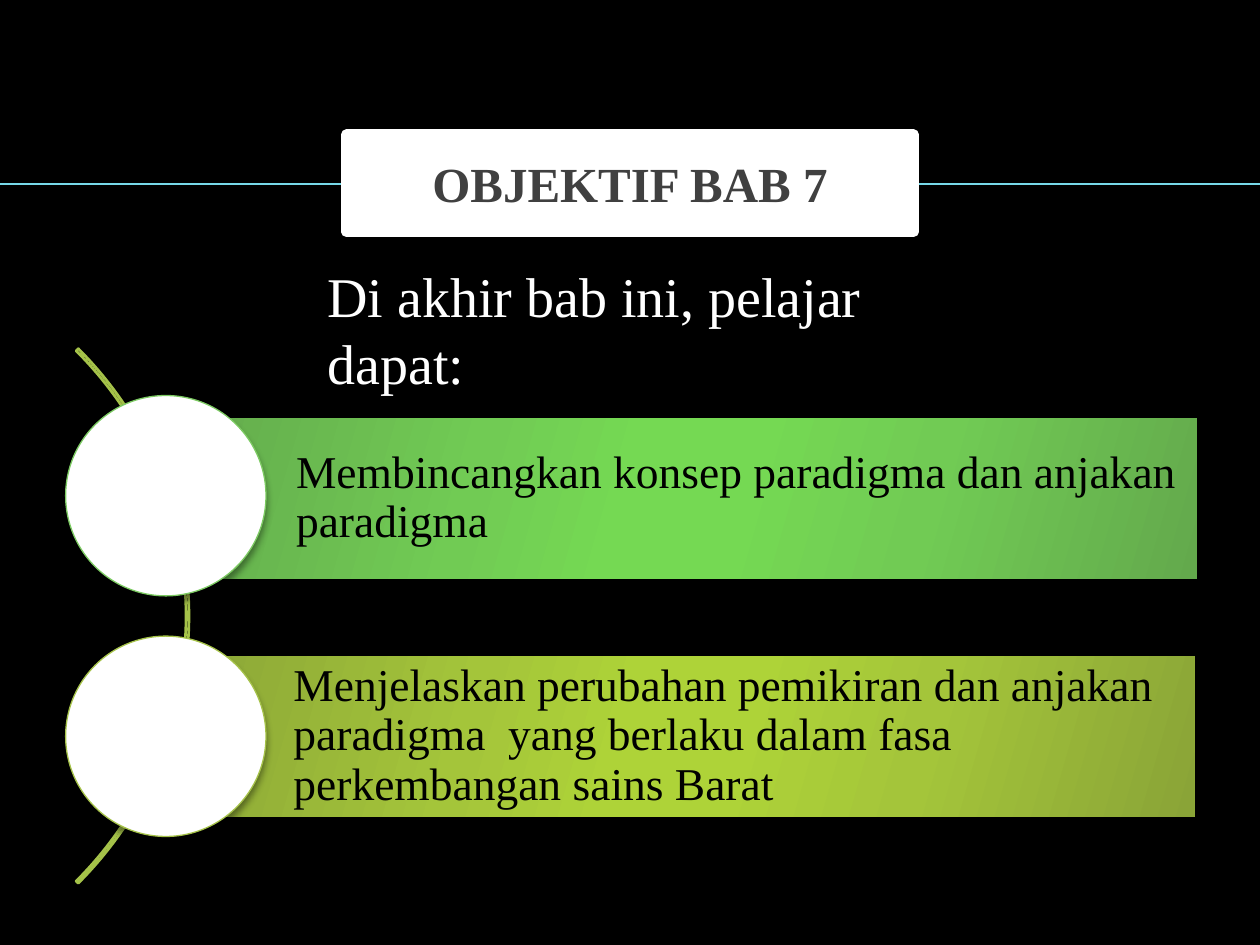
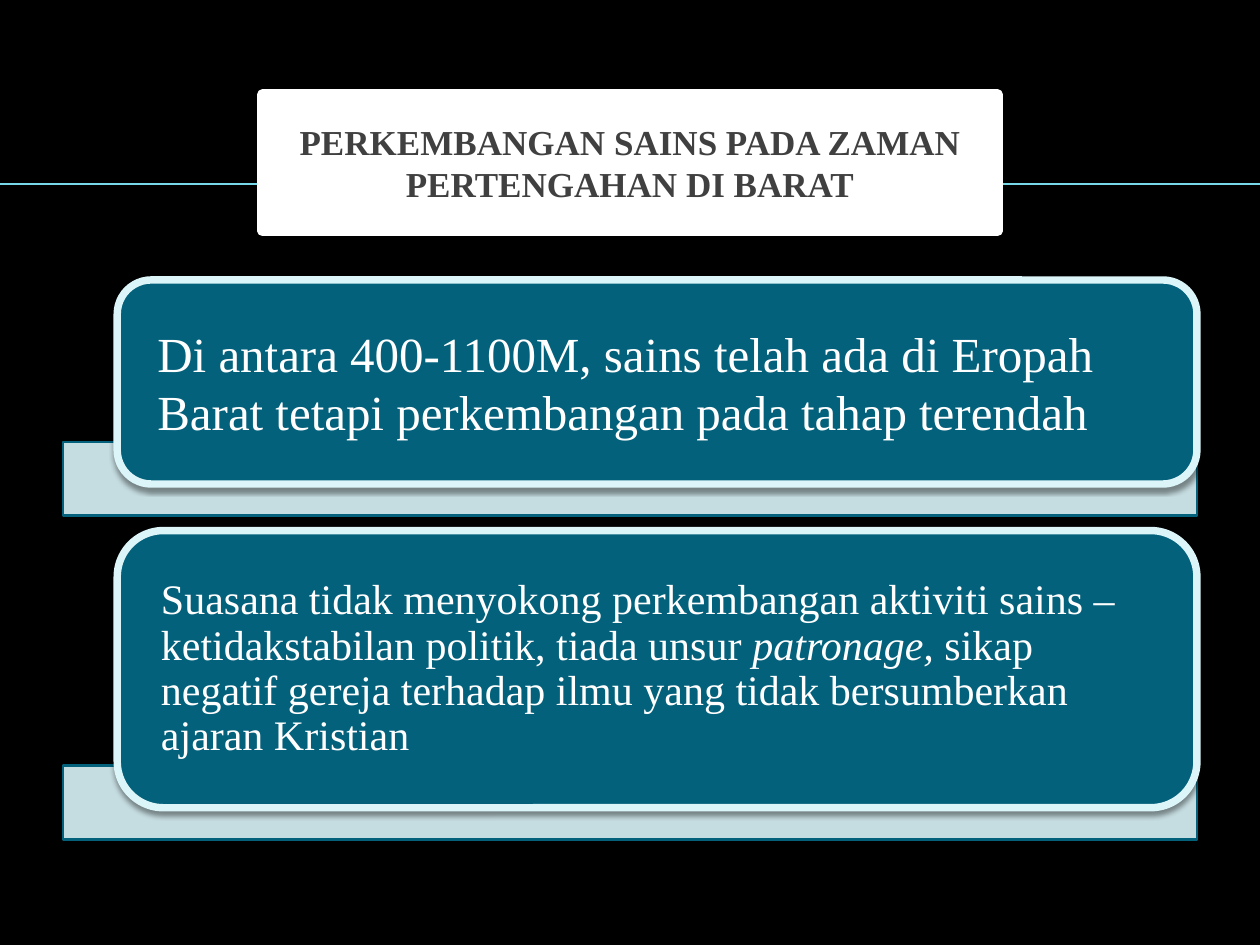
"""Build two chapter slides: the objectives, and science in the medieval West."""
import pptx
import pptx.dml.color
import pptx.enum.shapes
import pptx.enum.text
import pptx.oxml
import pptx.oxml.ns
import pptx.util
from lxml import etree

Pt = pptx.util.Pt
RGBColor = pptx.dml.color.RGBColor
SHAPE = pptx.enum.shapes.MSO_SHAPE
ALIGN = pptx.enum.text.PP_ALIGN
MIDDLE = pptx.enum.text.MSO_ANCHOR.MIDDLE
qn = pptx.oxml.ns.qn

BLACK = RGBColor(0x00, 0x00, 0x00)
WHITE = RGBColor(0xFF, 0xFF, 0xFF)
GREY = RGBColor(0x40, 0x40, 0x40)
AQUA = RGBColor(0x77, 0xD9, 0xE8)
GREEN = RGBColor(0x7C, 0xCA, 0x62)
LIME = RGBColor(0xA5, 0xC2, 0x49)
TEAL = RGBColor(0x04, 0x61, 0x7B)
PALE = RGBColor(0xDB, 0xF5, 0xF9)
GREEN_SHADES = [RGBColor(0x63, 0xA9, 0x4C), RGBColor(0x71, 0xCB, 0x54), RGBColor(0x75, 0xD9, 0x53)]
LIME_SHADES = [RGBColor(0x8A, 0xA4, 0x37), RGBColor(0xA4, 0xC5, 0x3A), RGBColor(0xAE, 0xD3, 0x38)]
FONT = "Times New Roman"

OBJECTIVES = {
    "title": "OBJEKTIF BAB 7",
    "title_box": (198, 77, 324, 55.5),
    "title_size": 28,
    "intro": "Di akhir bab ini, pelajar dapat:",
    "items": [
        ("Membincangkan konsep paradigma dan anjakan paradigma",
         (96.5, 239), GREEN_SHADES, GREEN),
        ("Menjelaskan perubahan pemikiran dan anjakan paradigma  yang berlaku "
         "dalam fasa perkembangan sains Barat",
         (95, 375), LIME_SHADES, LIME),
    ],
}
MEDIEVAL = {
    "title": "PERKEMBANGAN SAINS PADA ZAMAN PERTENGAHAN DI BARAT",
    "title_box": (150, 54, 420, 78),
    "title_size": 20,
    "cards": [
        ([("Di antara 400-1100M, sains telah ada di Eropah Barat tetapi "
           "perkembangan pada tahap terendah", False)], 28, 1.0, 116.6),
        ([("Suasana tidak menyokong perkembangan aktiviti sains – ketidakstabilan "
           "politik, tiada unsur ", False),
          ("patronage, ", True),
          ("sikap negatif gereja terhadap ilmu yang tidak bersumberkan ajaran "
           "Kristian", False)], 24, 0.9, 158.4),
    ],
}


def assign(target, values):
    for name, value in values.items():
        setattr(target, name, value)


def write(holder, runs, size, color, margins, paragraph_format=None, bold=False):
    """Fill a shape's text with (words, italic) runs in one paragraph."""
    frame = holder.text_frame
    left, top, right, bottom = map(Pt, margins)
    assign(frame, {"word_wrap": True, "margin_left": left, "margin_top": top,
                   "margin_right": right, "margin_bottom": bottom})
    paragraph = frame.paragraphs[0]
    assign(paragraph, {"alignment": ALIGN.LEFT, **(paragraph_format or {})})
    for words, italic in runs:
        run = paragraph.add_run()
        run.text = words
        assign(run.font, {"name": FONT, "size": Pt(size), "bold": bold, "italic": italic})
        run.font.color.rgb = color


def paint(shape, fill=None, line=None, width=0):
    if fill is None:
        shape.fill.background()
    else:
        shape.fill.solid()
        shape.fill.fore_color.rgb = fill
    if line is None:
        shape.line.fill.background()
    else:
        shape.line.color.rgb = line
        shape.line.width = Pt(width)


def add_part(slide, kind, box, **look):
    part = slide.shapes.add_shape(kind, *map(Pt, box))
    part.shadow.inherit = False
    part.text_frame.vertical_anchor = MIDDLE
    paint(part, **look)
    return part


def cast_shadow(shape, opacity, blur, distance):
    effects = shape._element.spPr.find(qn("a:effectLst"))
    shadow = etree.SubElement(effects, qn("a:outerShdw"), blurRad=str(Pt(blur)),
                              dist=str(Pt(distance)), dir="5400000", rotWithShape="0")
    black = etree.SubElement(shadow, qn("a:srgbClr"), val=str(BLACK))
    etree.SubElement(black, qn("a:alpha"), val=str(opacity * 1000))


def shade(shape, shades):
    """Give a shape a mirrored six-stop gradient."""
    shape.fill.gradient()
    gradient = shape._element.spPr.find(qn("a:gradFill"))
    stops = gradient.find(qn("a:gsLst"))
    for stop in list(stops):
        stops.remove(stop)
    for percent, color in zip((0, 30, 45, 55, 73, 100), shades + shades[::-1]):
        stop = etree.SubElement(stops, qn("a:gs"), pos=str(percent * 1000))
        etree.SubElement(stop, qn("a:srgbClr"), val=str(color))
    gradient.find(qn("a:lin")).set("ang", str(16 * 60000))


def start_slide(deck, content):
    """Add a slide with the rule across it."""
    slide = deck.slides.add_slide(deck.slide_layouts[5])
    rule = slide.shapes.add_connector(
        pptx.enum.shapes.MSO_CONNECTOR.STRAIGHT, 0, Pt(105), deck.slide_width, Pt(105))
    rule.line.color.rgb = AQUA
    rule.line.width = Pt(1)
    etree.SubElement(rule._element.spPr, qn("a:effectLst"))
    return slide


def place_title(slide, content):
    """Format the title plate and bring it in front of the rule."""
    title = slide.shapes.title
    assign(title, dict(zip(("left", "top", "width", "height"), map(Pt, content["title_box"]))))
    paint(title, WHITE, WHITE, 6)
    title.text_frame.vertical_anchor = MIDDLE
    write(title, [(content["title"], False)], content["title_size"], GREY,
          (7.2, 3.6, 7.2, 3.6), {"alignment": ALIGN.CENTER, "space_before": Pt(4)}, bold=True)
    slide.shapes._spTree.append(title._element)


def build_objectives(deck):
    slide = start_slide(deck, OBJECTIVES)
    arc = add_part(slide, SHAPE.BLOCK_ARC, (-324, 136, 432, 432), line=LIME, width=1.5)
    for index, amount in enumerate((189, 27, 0.004)):
        arc.adjustments[index] = amount
    disc, first_disc_top, pitch = 114.5, 226, 137.5
    for index, (words, corner, shades, outline) in enumerate(OBJECTIVES["items"]):
        bar = add_part(slide, SHAPE.RECTANGLE, (*corner, 587.5, 91.5))
        shade(bar, shades)
        cast_shadow(bar, 57, 4.5, 3)
        write(bar, [(words, False)], 26, BLACK, (72.7, 5, 5, 5), {"line_spacing": 0.9})
        marker = add_part(slide, SHAPE.OVAL,
                          (37.5, first_disc_top + index * pitch, disc, disc),
                          fill=WHITE, line=outline, width=0.75)
        cast_shadow(marker, 40, 4, 3.3)
    place_title(slide, OBJECTIVES)
    intro = slide.shapes.add_textbox(*map(Pt, (180, 146, 392.4, 46)))
    write(intro, [(OBJECTIVES["intro"], False)], 32, WHITE, (7.2, 3.6, 7.2, 3.6))


def build_medieval(deck):
    slide = start_slide(deck, MEDIEVAL)
    top, overlap, strip_height, gap = 160, 24, 42, 8.6
    for runs, size, spacing, height in MEDIEVAL["cards"]:
        strip_top = top + height - overlap
        strip = add_part(slide, SHAPE.RECTANGLE, (36, strip_top, 648, strip_height),
                         fill=PALE, line=TEAL, width=1.5)
        tint = strip._element.spPr.find(qn("a:solidFill")).find(qn("a:srgbClr"))
        etree.SubElement(tint, qn("a:alpha"), val="90000")
        card = add_part(slide, SHAPE.ROUNDED_RECTANGLE, (67, top, 617, height),
                        fill=TEAL, line=PALE, width=4.25)
        cast_shadow(card, 40, 3, 2)
        write(card, runs, size, WHITE, (17.3, 0, 17.3, 0), {"line_spacing": spacing})
        top = strip_top + strip_height + gap
    place_title(slide, MEDIEVAL)


def main():
    deck = pptx.Presentation()
    assign(deck, {"slide_width": Pt(720), "slide_height": Pt(540)})
    backdrop = deck.slide_master.background.fill
    backdrop.solid()
    backdrop.fore_color.rgb = BLACK
    build_objectives(deck)
    build_medieval(deck)
    deck.save("out.pptx")


if __name__ == "__main__":
    main()
